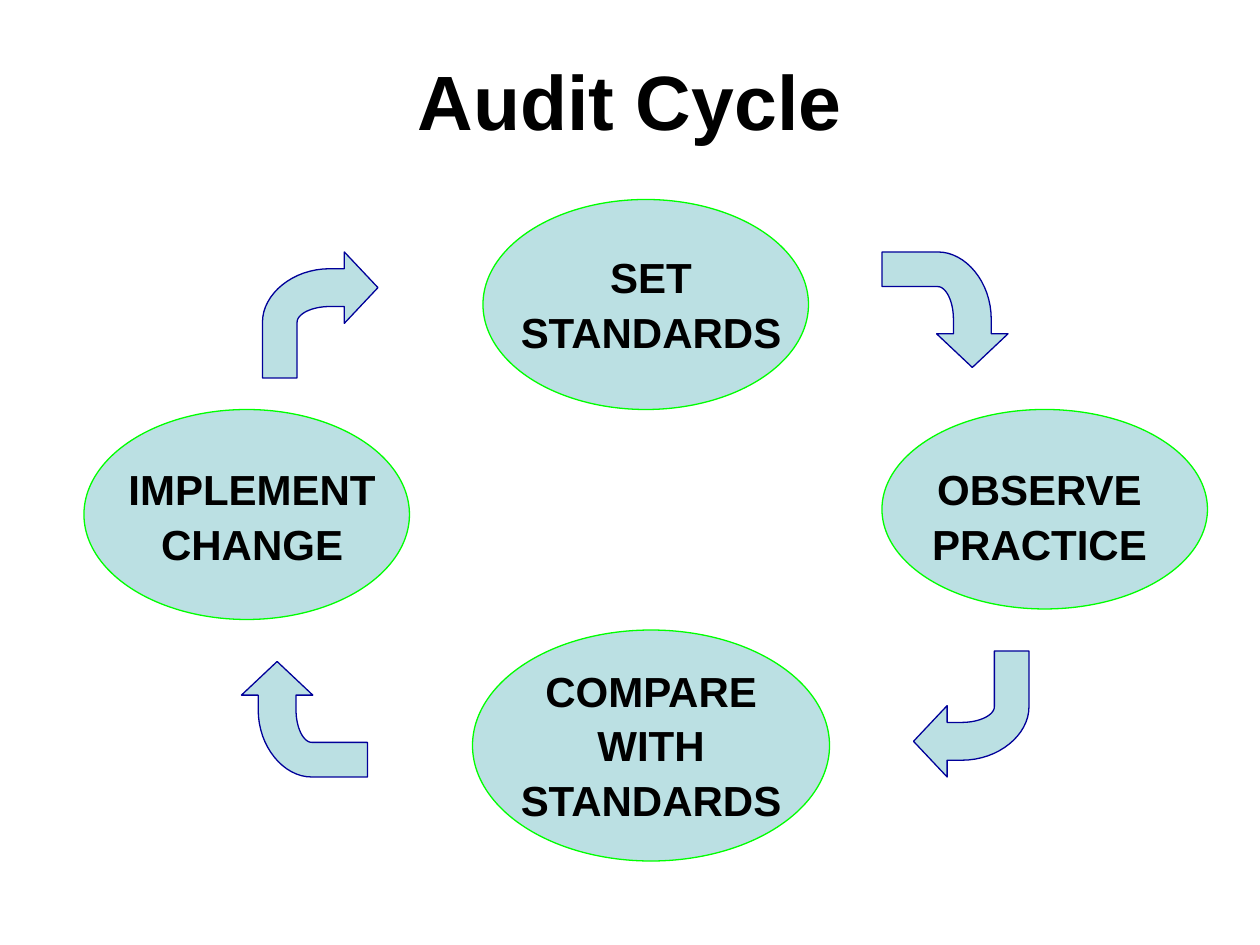
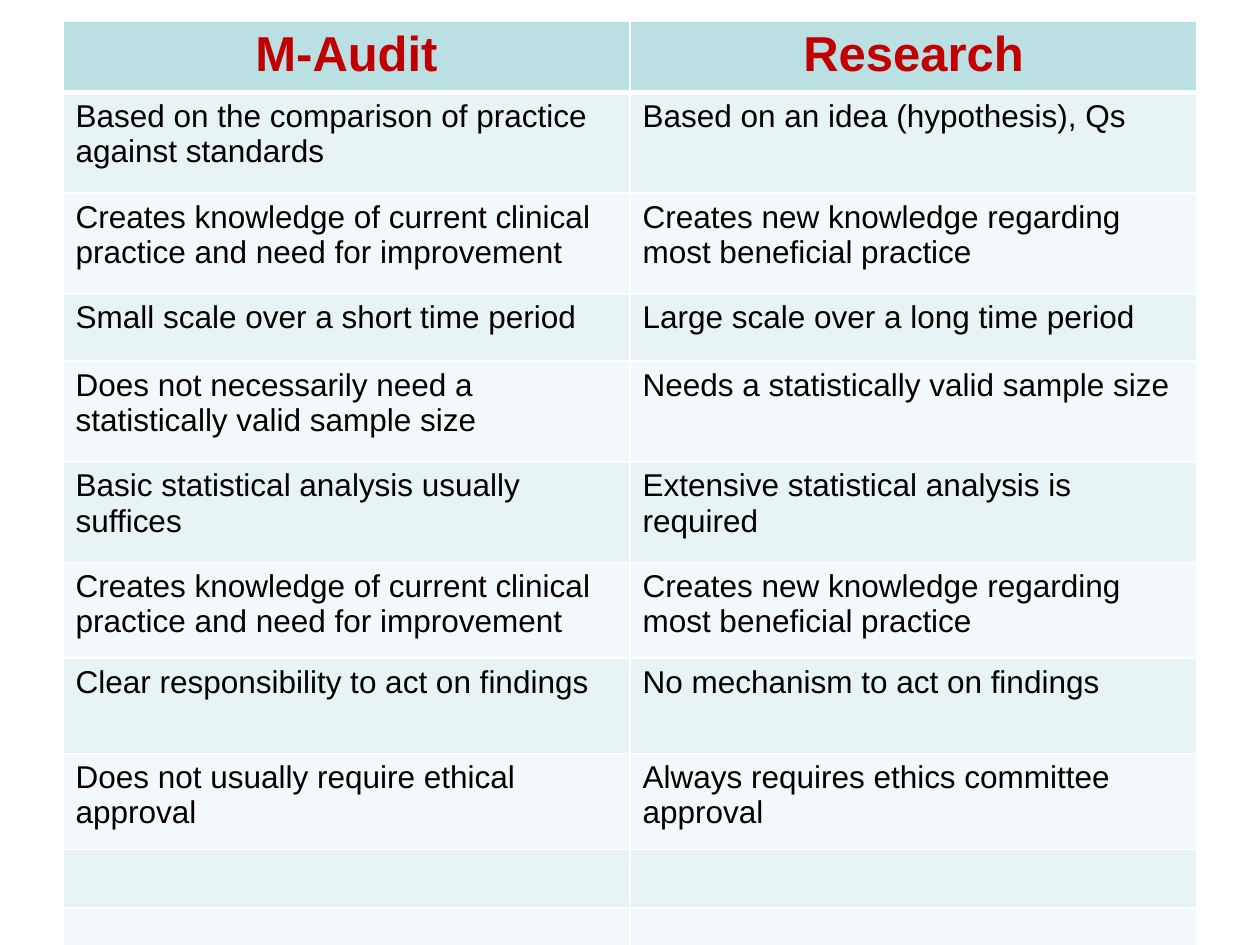
from dataclasses import dataclass

import lxml.etree
import pptx
import pptx.dml.color
import pptx.enum.shapes
import pptx.enum.text
import pptx.oxml
import pptx.oxml.ns
import pptx.util

Align = pptx.enum.text.PP_ALIGN
UNITS_PER_INCH = 12
COLUMNS, ROWS = 120, 90


@dataclass(frozen=True)
class Theme:
    font: str = "Arial"
    text: str = "000000"
    accent: str = "BBE0E3"
    stage_outline: str = "00FF00"
    arrow_outline: str = "000099"
    table_heading: str = "C00000"
    rule: str = "FFFFFF"
    bands: tuple[str, str] = ("E7F3F4", "F3F9FA")
    title_size: int = 44
    stage_size: int = 24
    heading_size: int = 28
    body_size: int = 18
    outline_width: float = 0.75
    rule_width: int = 1
    heading_rule_width: int = 3
    stage_spacing: float = 1.08


@dataclass(frozen=True)
class Area:
    """A box in grid units, twelve to the inch."""
    column: float
    row: float
    width: float
    height: float

    def emu(self) -> list[int]:
        return [grid(n) for n in (self.column, self.row, self.width, self.height)]


@dataclass(frozen=True)
class Stage:
    label: str
    oval: Area
    label_area: Area


@dataclass(frozen=True)
class Turn:
    column: float
    row: float
    rotation: int


@dataclass(frozen=True)
class Comparison:
    audit: str
    research: str
    height: float


THEME = Theme()

STAGES = (
    Stage("SET STANDARDS", Area(46, 19, 31, 20), Area(48, 23, 28, 10.8)),
    Stage("OBSERVE PRACTICE", Area(84, 39, 31, 19), Area(85, 43.2, 28, 10.8)),
    Stage("COMPARE WITH STANDARDS", Area(45, 60, 34, 22), Area(48, 62.4, 28, 15.6)),
    Stage("IMPLEMENT CHANGE", Area(8, 39, 31, 20), Area(10, 43.2, 28, 10.8)),
)

TURNS = (
    Turn(84.5, 23.5, 90),
    Turn(87, 62, 180),
    Turn(23.5, 62.5, 270),
    Turn(25, 24, 0),
)

KNOWLEDGE = (
    "Creates knowledge of current clinical\npractice and need for improvement",
    "Creates new knowledge regarding most beneficial practice",
)

COMPARISONS = (
    Comparison("M-Audit", "Research", 5.6),
    Comparison("Based on the comparison of practice\nagainst standards",
               "Based on an idea (hypothesis), Qs", 9.6),
    Comparison(*KNOWLEDGE, 9.6),
    Comparison("Small scale over a short time period",
               "Large scale over a long time period", 6.4),
    Comparison("Does not necessarily need a\nstatistically valid sample size",
               "Needs a statistically valid sample size", 9.6),
    Comparison("Basic statistical analysis usually\nsuffices",
               "Extensive statistical analysis is required", 9.6),
    Comparison(*KNOWLEDGE, 9.1),
    Comparison("Clear responsibility to act on findings",
               "No mechanism to act on findings", 9.1),
    Comparison("Does not usually require ethical\napproval",
               "Always requires ethics committee approval", 9.1),
    Comparison("", "", 5.6),
    Comparison("", "", 5.6),
)


def grid(units: float) -> int:
    return pptx.util.Inches(units / UNITS_PER_INCH)


def rgb(color: str) -> pptx.dml.color.RGBColor:
    return pptx.dml.color.RGBColor.from_string(color)


def write(frame, text: str, size: int, color: str = THEME.text,
          bold: bool = True, align=Align.CENTER, spacing: float | None = None) -> None:
    frame.text = text
    frame.word_wrap = True
    for paragraph in frame.paragraphs:
        paragraph.alignment = align
        if spacing:
            paragraph.line_spacing = spacing
        for run in paragraph.runs:
            run.font.name = THEME.font
            run.font.size = pptx.util.Pt(size)
            run.font.bold = bold
            run.font.color.rgb = rgb(color)


def paint(shape, outline: str) -> None:
    shape.shadow.inherit = False
    shape.fill.solid()
    shape.fill.fore_color.rgb = rgb(THEME.accent)
    shape.line.color.rgb = rgb(outline)
    shape.line.width = pptx.util.Pt(THEME.outline_width)


def add_title(slide, text: str) -> None:
    frame = slide.shapes.add_textbox(*Area(6, 2, 108, 15).emu()).text_frame
    frame.vertical_anchor = pptx.enum.text.MSO_ANCHOR.MIDDLE
    write(frame, text, THEME.title_size)


def add_stage(slide, stage: Stage) -> None:
    oval = slide.shapes.add_shape(
        pptx.enum.shapes.MSO_SHAPE.OVAL, *stage.oval.emu())
    paint(oval, THEME.stage_outline)
    label = slide.shapes.add_textbox(*stage.label_area.emu())
    write(label.text_frame, stage.label, THEME.stage_size,
          spacing=THEME.stage_spacing)


def curve(*controls: tuple[float, float], steps: int = 16) -> list[tuple[float, float]]:
    """Sample a cubic Bezier curve given by its four control points."""
    points = []
    for step in range(steps + 1):
        t = step / steps
        weights = ((1 - t) ** 3, 3 * t * (1 - t) ** 2, 3 * t * t * (1 - t), t ** 3)
        points.append(tuple(sum(w * point[axis] for w, point in zip(weights, controls))
                            for axis in (0, 1)))
    return points


def add_turn(slide, turn: Turn) -> None:
    """Draw a bent arrow that comes up from below and points right."""
    outline = [
        (11, 3.4), (7.8, 0), (7.8, 1.6),
        *curve((6.4, 1.6), (2.9, 1.6), (0, 4), (0, 6.7)),
        (0, 12), (3.3, 12),
        *curve((3.3, 6.7), (3.3, 5.9), (4.7, 5.2), (6.4, 5.2)),
        (7.8, 5.2), (7.8, 6.8),
    ]
    start, *rest = [(grid(x), grid(y)) for x, y in outline]
    builder = slide.shapes.build_freeform(*start)
    builder.add_line_segments(rest, close=True)
    arrow = builder.convert_to_shape(grid(turn.column), grid(turn.row))
    arrow.rotation = turn.rotation
    paint(arrow, THEME.arrow_outline)


def rule_cell(cell, top: int, bottom: int) -> None:
    """Give the cell borders, which must precede its fill in the XML."""
    widths = {"lnL": THEME.rule_width, "lnR": THEME.rule_width,
              "lnT": top, "lnB": bottom}
    properties = cell._tc.get_or_add_tcPr()
    for position, (tag, width) in enumerate(widths.items()):
        border = lxml.etree.Element(pptx.oxml.ns.qn(f"a:{tag}"),
                                    w=str(pptx.util.Pt(width)))
        fill = lxml.etree.SubElement(border, pptx.oxml.ns.qn("a:solidFill"))
        lxml.etree.SubElement(fill, pptx.oxml.ns.qn("a:srgbClr"), val=THEME.rule)
        properties.insert(position, border)


def add_comparison_table(slide, comparisons: tuple[Comparison, ...]) -> None:
    area = Area(6, 2, 108, sum(entry.height for entry in comparisons))
    table = slide.shapes.add_table(len(comparisons), 2, *area.emu()).table
    table.horz_banding = False
    for index, entry in enumerate(comparisons):
        table.rows[index].height = grid(entry.height)
        heading = index == 0
        for column, text in enumerate((entry.audit, entry.research)):
            cell = table.cell(index, column)
            cell.fill.solid()
            cell.fill.fore_color.rgb = rgb(
                THEME.accent if heading else THEME.bands[(index - 1) % 2])
            rule_cell(cell,
                      THEME.heading_rule_width if index == 1 else THEME.rule_width,
                      THEME.heading_rule_width if heading else THEME.rule_width)
            if heading:
                write(cell.text_frame, text, THEME.heading_size, THEME.table_heading)
            elif text:
                write(cell.text_frame, text, THEME.body_size,
                      bold=False, align=Align.LEFT)


def main() -> None:
    deck = pptx.Presentation()
    deck.slide_width, deck.slide_height = grid(COLUMNS), grid(ROWS)
    blank = deck.slide_layouts[6]

    cycle = deck.slides.add_slide(blank)
    add_title(cycle, "Audit Cycle")
    for stage in STAGES:
        add_stage(cycle, stage)
    for turn in TURNS:
        add_turn(cycle, turn)

    add_comparison_table(deck.slides.add_slide(blank), COMPARISONS)
    deck.save("out.pptx")


if __name__ == "__main__":
    main()
